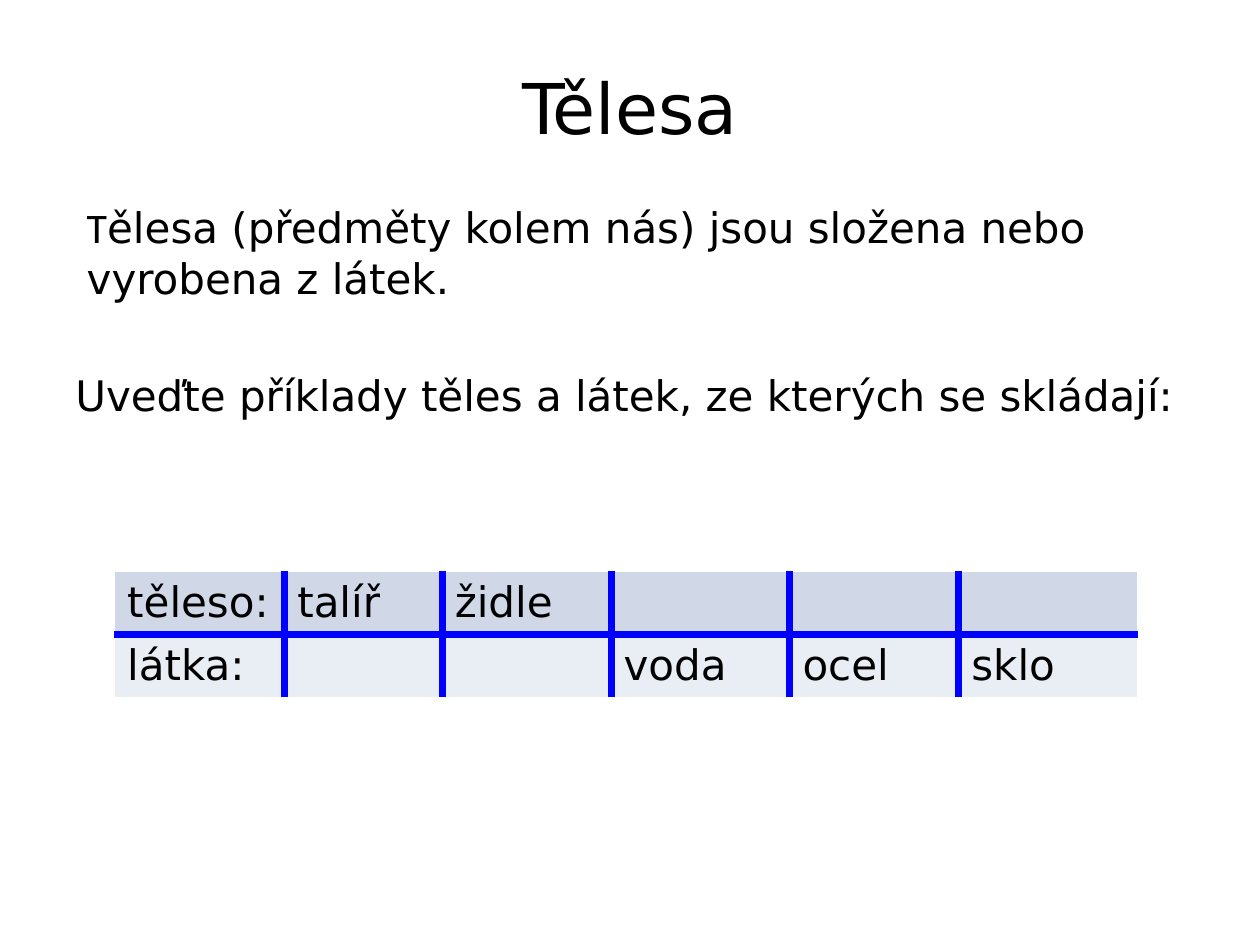
from dataclasses import dataclass

from lxml.etree import SubElement
from pptx import Presentation
from pptx.dml.color import RGBColor
from pptx.enum.text import MSO_ANCHOR as Anchor, PP_ALIGN as Align
from pptx.oxml.ns import qn
from pptx.util import Emu, Inches, Pt

WIDTH, HEIGHT = Inches(10), Inches(7.5)


@dataclass(frozen=True)
class Theme:
    font: str = "DejaVu Sans"
    initial_font: str = "Calibri"
    title_size: int = 40
    body_size: int = 24
    ink: str = "000000"
    rule: str = "0000FF"
    edge: str = "FFFFFF"
    row_fills: tuple = ("D0D8E8", "E9EDF4")


THEME = Theme()
ROWS = (
    ("těleso:", "talíř", "židle", "", "", ""),
    ("látka:", "", "", "voda", "ocel", "sklo"),
)
COLUMN_WIDTHS = (1.35, 1.25, 1.34, 1.42, 1.34, 1.42)
ROW_HEIGHT = 0.49


def share(left, top, width, height):
    """Turn shares of the slide into a position and a size."""
    return [Emu(round(part * full)) for part, full in
            zip((left, top, width, height), (WIDTH, HEIGHT) * 2)]


def write(paragraph, text, font=THEME.font, size=THEME.body_size,
          align=Align.LEFT, before=0, indent=0):
    paragraph.alignment = align
    paragraph.space_before = Pt(before)
    if indent:
        properties = paragraph._p.get_or_add_pPr()
        properties.set("marL", str(Inches(indent)))
        properties.set("indent", "0")
    paragraph.font.size = Pt(size)
    if text:
        run = paragraph.add_run()
        run.text = text
        run.font.name = font
        run.font.size = Pt(size)
        run.font.color.rgb = RGBColor.from_string(THEME.ink)


def add_text_frame(slide, area, anchor=Anchor.TOP):
    frame = slide.shapes.add_textbox(*share(*area)).text_frame
    frame.word_wrap = True
    frame.vertical_anchor = anchor
    return frame


def add_border(cell, side, color, width):
    line = SubElement(cell._tc.get_or_add_tcPr(), qn(f"a:ln{side}"),
                      w=str(Pt(width)))
    fill = SubElement(line, qn("a:solidFill"))
    SubElement(fill, qn("a:srgbClr"), val=color)


def add_examples_table(slide, left, top):
    count = len(COLUMN_WIDTHS)
    area = share(left, top, 0.81, 0.13)
    table = slide.shapes.add_table(len(ROWS), count, *area).table
    table.first_row = table.horz_banding = False
    for column, width in zip(table.columns, COLUMN_WIDTHS):
        column.width = Inches(width)

    inner, outer = (THEME.rule, 4.5), (THEME.edge, 1)
    for row_index, words in enumerate(ROWS):
        table.rows[row_index].height = Inches(ROW_HEIGHT)
        for column_index, word in enumerate(words):
            cell = table.cell(row_index, column_index)
            write(cell.text_frame.paragraphs[0], word)
            # Blue rules between cells, thin white edges at the sides
            add_border(cell, "L", *(inner if column_index else outer))
            add_border(cell, "R",
                       *(inner if column_index < count - 1 else outer))
            add_border(cell, "T" if row_index else "B", *inner)
            cell.fill.solid()
            cell.fill.fore_color.rgb = RGBColor.from_string(
                THEME.row_fills[row_index])


def main():
    deck = Presentation()
    deck.slide_width, deck.slide_height = WIDTH, HEIGHT
    slide = deck.slides.add_slide(deck.slide_layouts[6])

    # Title
    title = add_text_frame(slide, (0.05, 0.04, 0.9, 0.145), Anchor.MIDDLE)
    write(title.paragraphs[0], "Tělesa", size=THEME.title_size,
          align=Align.CENTER)

    # Statement and task
    body = add_text_frame(slide, (0.05, 0.207, 0.9, 0.745))
    statement = body.paragraphs[0]
    write(statement, "T", font=THEME.initial_font, indent=0.09)
    write(statement, "ělesa (předměty kolem nás) jsou složena nebo "
          "vyrobena z látek.", indent=0.09)
    write(body.add_paragraph(), "Uveďte příklady těles a látek, "
          "ze kterých se skládají:", before=38)

    # Bodies and the substances they are made of
    add_examples_table(slide, 0.091, 0.605)

    deck.save("out.pptx")


if __name__ == "__main__":
    main()
